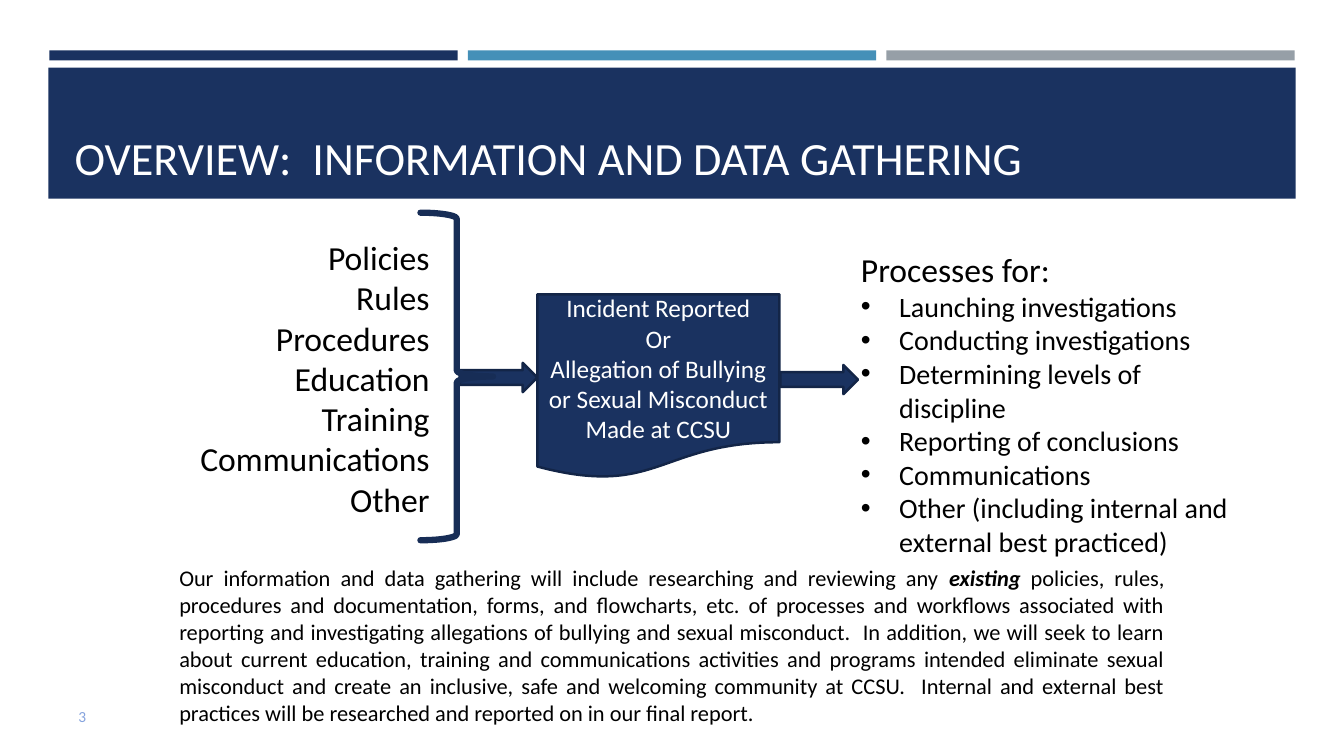
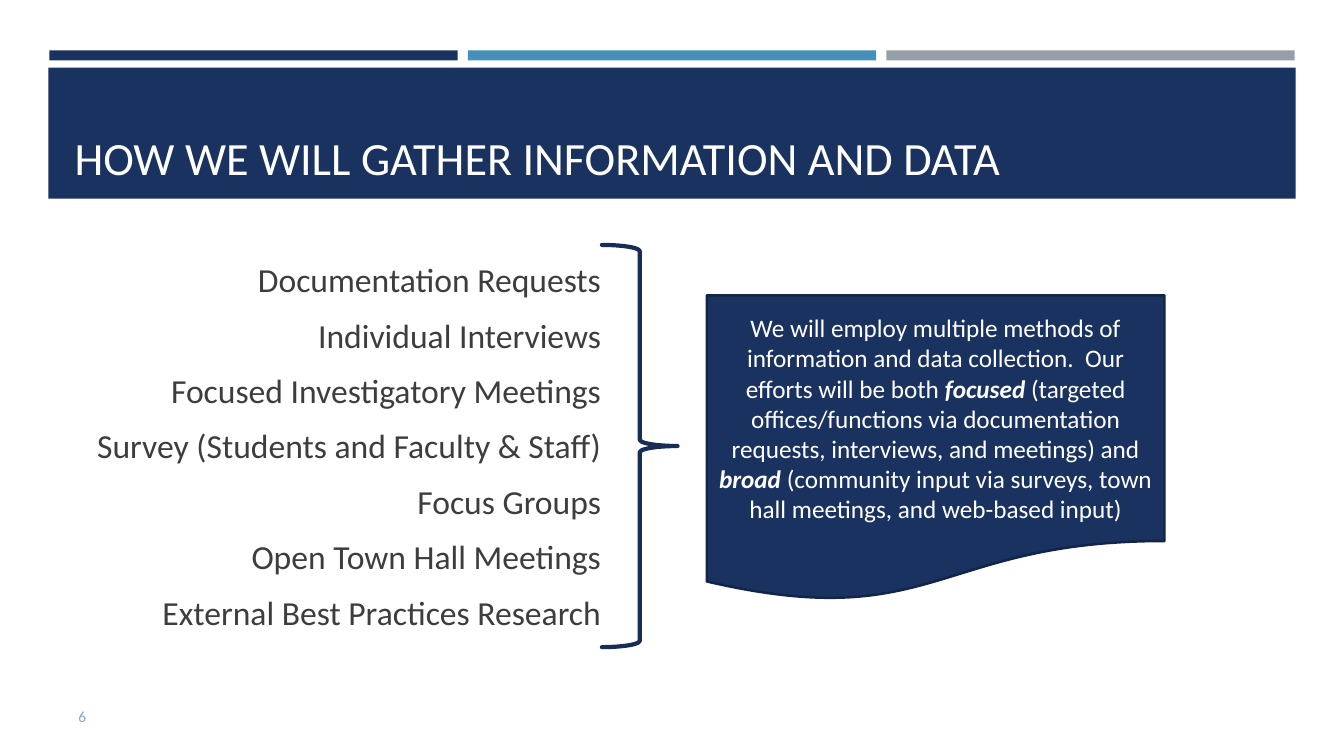
from dataclasses import dataclass

from lxml import etree
from pptx import Presentation
from pptx import util as u
from pptx.dml.color import RGBColor
from pptx.enum import shapes, text
from pptx.oxml.ns import qn

PX = 9144  # EMU; 100 px to the inch
FONT = "Calibri"
NAVY, BLUE, GREY = "1A3260", "4590B8", "969FA7"
EDGE, BRACE_LINE = "132547", "172D56"
WHITE, BLACK, CHARCOAL, PALE_BLUE = "FFFFFF", "000000", "3D3D3D", "85A3DE"
LEFT, CENTER = text.PP_ALIGN.LEFT, text.PP_ALIGN.CENTER
RIGHT, JUSTIFY = text.PP_ALIGN.RIGHT, text.PP_ALIGN.JUSTIFY
TOP, MIDDLE, BOTTOM = (text.MSO_ANCHOR.TOP, text.MSO_ANCHOR.MIDDLE,
                       text.MSO_ANCHOR.BOTTOM)
Kind = shapes.MSO_SHAPE


@dataclass(frozen=True)
class Box:
    left: int
    top: int
    width: int
    height: int

    def emu(self) -> list[int]:
        return [n * PX for n in (self.left, self.top, self.width, self.height)]


@dataclass(frozen=True)
class Style:
    size: int
    color: str
    align: text.PP_ALIGN = LEFT
    anchor: text.MSO_ANCHOR = TOP
    before: float = 0
    after: float = 0


TITLE = Style(33, WHITE, anchor=BOTTOM)
NUMBER = Style(11, PALE_BLUE)
ON_DOCUMENT = Style(18, WHITE, CENTER, MIDDLE)
SOURCES = Style(24, BLACK, RIGHT)
METHODS = Style(24, CHARCOAL, RIGHT, MIDDLE, before=4.8, after=6)
PROCESSES = Style(24, BLACK)
SUMMARY = Style(16, BLACK, JUSTIFY)


def rgb(color: str) -> RGBColor:
    return RGBColor.from_string(color)


def write(frame, paragraphs: list[str], style: Style) -> None:
    """Fill a text frame; words between asterisks become bold italic."""
    frame.word_wrap = True
    frame.auto_size = text.MSO_AUTO_SIZE.NONE
    frame.vertical_anchor = style.anchor
    frame.text = "\n".join(paragraphs)
    for para in frame.paragraphs:
        para.alignment = style.align
        para.space_before, para.space_after = u.Pt(style.before), u.Pt(style.after)
        pieces = para.text.split("*")
        para.text = pieces[0]
        for piece in pieces[1:]:
            para.add_run().text = piece
        for index, span in enumerate(para.runs):
            font = span.font
            font.name, font.size = FONT, u.Pt(style.size)
            font.color.rgb = rgb(style.color)
            if index % 2:
                font.bold = font.italic = True


def add_text(page, box: Box, paragraphs: list[str], style: Style):
    frame = page.shapes.add_textbox(*box.emu()).text_frame
    write(frame, paragraphs, style)
    return frame


def add_bullet(para, size: int) -> None:
    props = para._p.get_or_add_pPr()
    props.set("marL", str(38 * PX))
    props.set("indent", str(-38 * PX))
    etree.SubElement(props, qn("a:buFont")).set("typeface", "Arial")
    etree.SubElement(props, qn("a:buChar")).set("char", "•")
    for span in para.runs:
        span.font.size = u.Pt(size)


def add_shape(page, kind, box: Box, fill: str = "", line: str = "",
              weight: float = 1.75):
    shape = page.shapes.add_shape(kind, *box.emu())
    shape.shadow.inherit = False
    if fill:
        shape.fill.solid()
        shape.fill.fore_color.rgb = rgb(fill)
    else:
        shape.fill.background()
    if line:
        shape.line.color.rgb = rgb(line)
        shape.line.width = u.Pt(weight)
    else:
        shape.line.fill.background()
    return shape


def add_document(page, box: Box, paragraphs: list[str]) -> None:
    document = add_shape(page, Kind.FLOWCHART_DOCUMENT, box, NAVY, EDGE)
    write(document.text_frame, paragraphs, ON_DOCUMENT)


def add_brace(page, box: Box, weight: float) -> None:
    brace = add_shape(page, Kind.RIGHT_BRACE, box, line=BRACE_LINE, weight=weight)
    brace.line._get_or_add_ln().set("cap", "rnd")


def add_arrow(page, left: int, top: int) -> None:
    add_shape(page, Kind.RIGHT_ARROW, Box(left, top, 77, 29), NAVY, EDGE)


def move_bands_to_layout(page, layout) -> None:
    """Draw the header bands and hand them to the layout all pages share."""
    bands = [(Box(49 + 415 * index, 50, 405, 10), color)
             for index, color in enumerate((NAVY, BLUE, GREY))]
    bands.append((Box(48, 67, 1237, 130), NAVY))
    for index, (box, color) in enumerate(bands):
        band = add_shape(page, Kind.RECTANGLE, box, color)
        band.element.nvSpPr.cNvPr.set("id", str(100 + index))
        layout.shapes.element.append(band.element)


def add_page(deck, title: str, number: int):
    page = deck.slides.add_slide(deck.slide_layouts[5])
    heading = page.shapes.title
    heading.left, heading.top, heading.width, heading.height = (
        Box(64, 77, 1206, 111).emu())
    write(heading.text_frame, [title], TITLE)
    add_text(page, Box(68, 697, 28, 29), [str(number)], NUMBER)
    return page


def fill_overview(page) -> None:
    add_arrow(page, 456, 360)
    add_document(page, Box(533, 292, 240, 183), [
        "Incident Reported", "Or",
        "Allegation of Bullying or Sexual Misconduct Made at CCSU"])
    add_text(page, Box(186, 230, 250, 293), [
        "Policies", "Rules", "Procedures", "Education", "Training",
        "Communications", "Other"], SOURCES)
    add_brace(page, Box(417, 211, 72, 325), 4.5)
    add_arrow(page, 774, 362)
    processes = add_text(page, Box(844, 242, 408, 286), [
        "Processes for:", "Launching investigations",
        "Conducting investigations", "Determining levels of discipline",
        "Reporting of conclusions", "Communications",
        "Other (including internal and external best practiced)"], PROCESSES)
    for para in processes.paragraphs[1:]:
        add_bullet(para, 20)
    add_text(page, Box(168, 555, 997, 175), [
        "Our information and data gathering will include researching and "
        "reviewing any *existing* policies, rules, procedures and "
        "documentation, forms, and flowcharts, etc. of processes and "
        "workflows associated with reporting and investigating allegations "
        "of bullying and sexual misconduct.  In addition, we will seek to "
        "learn about current education, training and communications "
        "activities and programs intended eliminate sexual misconduct and "
        "create an inclusive, safe and welcoming community at CCSU.  "
        "Internal and external best practices will be researched and "
        "reported on in our final report."], SUMMARY)


def fill_methods(page) -> None:
    add_text(page, Box(81, 204, 525, 476), [
        "Documentation Requests", "Individual Interviews",
        "Focused Investigatory Meetings",
        "Survey (Students and Faculty & Staff)", "Focus Groups",
        "Open Town Hall Meetings", "External Best Practices Research"], METHODS)
    add_document(page, Box(701, 293, 454, 304), [
        "We will employ multiple methods of information and data collection.  "
        "Our efforts will be both *focused *(targeted offices/functions via "
        "documentation requests, interviews, and meetings) and *broad* "
        "(community input via surveys, town hall meetings, and web-based "
        "input)"])
    add_brace(page, Box(597, 243, 75, 399), 3)


def main() -> None:
    deck = Presentation()
    deck.slide_width, deck.slide_height = 1333 * PX, 750 * PX
    overview = add_page(deck, "OVERVIEW:  INFORMATION AND DATA GATHERING", 3)
    move_bands_to_layout(overview, overview.slide_layout)
    fill_overview(overview)
    fill_methods(add_page(deck, "HOW WE WILL GATHER INFORMATION AND DATA", 6))
    deck.save("out.pptx")


if __name__ == "__main__":
    main()
